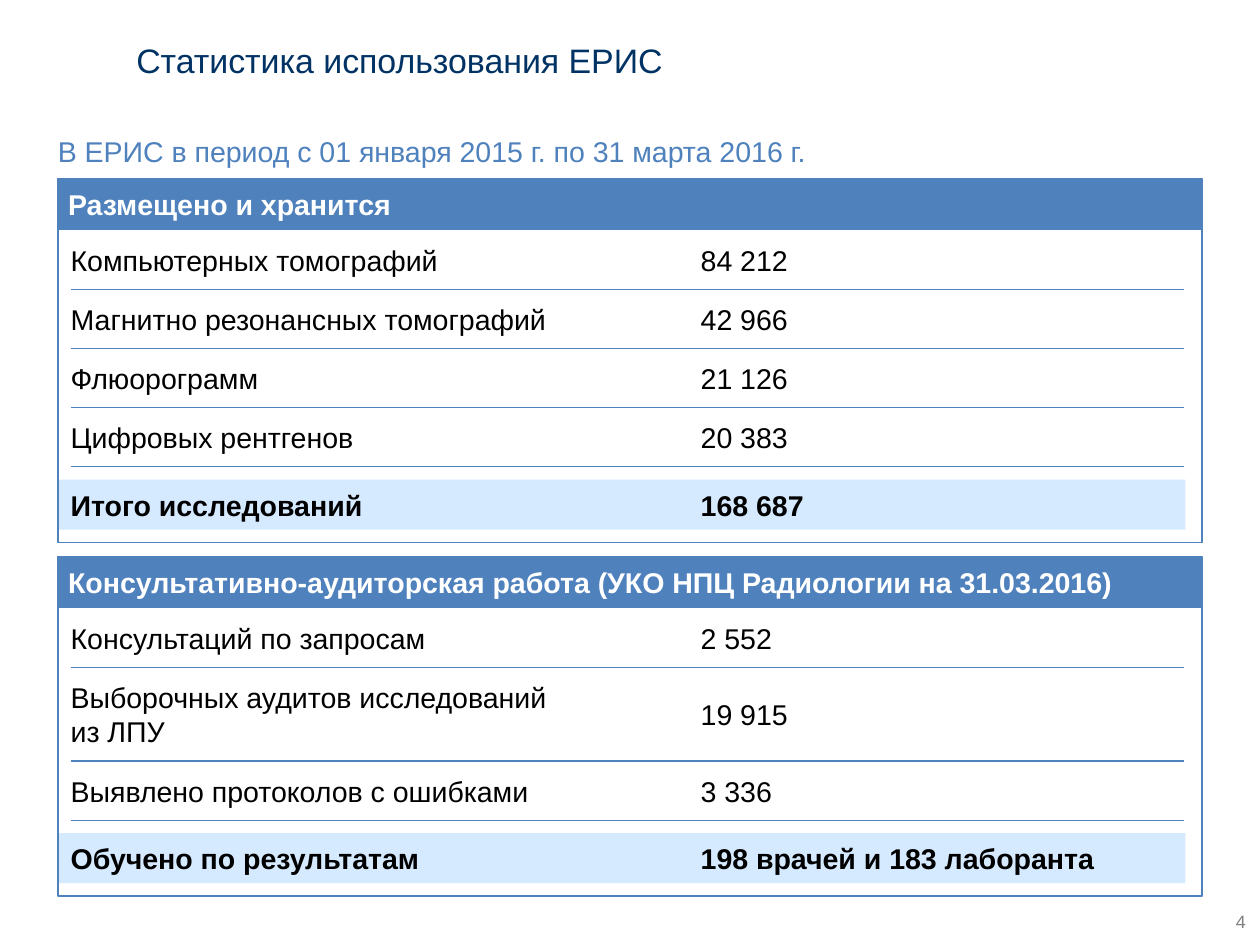
"""Build the ERIS usage statistics slide with two panels of figures."""
import pptx
import pptx.dml.color
import pptx.enum.shapes
import pptx.enum.text
import pptx.util
from lxml import etree

Inches = pptx.util.Inches
ALIGN = pptx.enum.text.PP_ALIGN
BLUE, NAVY, PALE, GREY = "4F81BD", "003264", "D6EAFF", "808080"
BLACK, WHITE = "000000", "FFFFFF"

PANEL_LEFT, PANEL_WIDTH = 0.45, 8.9
LABEL_LEFT, LABEL_WIDTH = 0.55, 3.86
VALUE_LEFT, VALUE_WIDTH = 5.45, 3.76
RULE_RIGHT = VALUE_LEFT + VALUE_WIDTH
HEADER_HEIGHT, BAND_HEIGHT = 0.39, 0.39
ROW_HEIGHT, LINE_HEIGHT, GAP = 0.46, 0.27, 0.1

panels = [
    (1.39, "Размещено и хранится",
     [("Компьютерных томографий", "84 212", 1),
      ("Магнитно резонансных томографий", "42 966", 1),
      ("Флюорограмм", "21 126", 1),
      ("Цифровых рентгенов", "20 383", 1)],
     ("Итого исследований", "168 687")),
    (4.33, "Консультативно-аудиторская работа (УКО НПЦ Радиологии на 31.03.2016)",
     [("Консультаций по запросам", "2 552", 1),
      ("Выборочных аудитов исследований из ЛПУ", "19 915", 2),
      ("Выявлено протоколов с ошибками", "3 336", 1)],
     ("Обучено по результатам", "198 врачей и 183 лаборанта")),
]

presentation = pptx.Presentation()
presentation.slide_width = Inches(9.8)
presentation.slide_height = Inches(7.35)
slide = presentation.slides.add_slide(presentation.slide_layouts[5])
shapes = slide.shapes


def write(shape, text, color, size=16, bold=False, align=ALIGN.LEFT, margin=0):
    frame = shape.text_frame
    frame.word_wrap = True
    frame.auto_size = pptx.enum.text.MSO_AUTO_SIZE.NONE
    frame.vertical_anchor = pptx.enum.text.MSO_ANCHOR.MIDDLE
    frame.margin_left = frame.margin_right = Inches(margin)
    frame.margin_top = frame.margin_bottom = 0
    paragraph = frame.paragraphs[0]
    paragraph.alignment = align
    run = paragraph.add_run()
    run.text = text
    run.font.name = "Arial"
    run.font.size = pptx.util.Pt(size)
    run.font.bold = bold
    run.font.color.rgb = pptx.dml.color.RGBColor.from_string(color)


def add_box(left, top, width, height, fill=None, line=None):
    box = shapes.add_shape(pptx.enum.shapes.MSO_SHAPE.RECTANGLE,
                           Inches(left), Inches(top), Inches(width), Inches(height))
    box.shadow.inherit = False
    for part, color in ((box.fill, fill), (box.line.fill, line)):
        if color:
            part.solid()
            part.fore_color.rgb = pptx.dml.color.RGBColor.from_string(color)
        else:
            part.background()
    if line:
        box.line.width = pptx.util.Pt(1)
    return box


title = shapes.title
title.left, title.top = Inches(1.06), Inches(0.31)
title.width, title.height = Inches(7.92), Inches(0.32)
write(title, "Статистика использования ЕРИС", NAVY, size=19)

period = shapes.add_textbox(Inches(PANEL_LEFT), Inches(1.04), Inches(PANEL_WIDTH), Inches(LINE_HEIGHT))
write(period, "В ЕРИС в период с 01 января 2015 г. по 31 марта 2016 г.", BLUE)

for panel_top, heading, rows, total in panels:
    header = add_box(PANEL_LEFT, panel_top, PANEL_WIDTH, HEADER_HEIGHT, BLUE, BLUE)
    write(header, heading, WHITE, bold=True, margin=0.08)

    cells = []
    top = panel_top + 0.4
    for label, value, lines in rows:
        height = ROW_HEIGHT + (lines - 1) * LINE_HEIGHT
        cells.append((label, value, top, height, False))
        top += height
        rule = shapes.add_connector(pptx.enum.shapes.MSO_CONNECTOR.STRAIGHT,
                                    Inches(LABEL_LEFT), Inches(top), Inches(RULE_RIGHT), Inches(top))
        rule.line.color.rgb = pptx.dml.color.RGBColor.from_string(BLUE)
        rule.line.width = pptx.util.Pt(0.75)
        properties = rule.line._get_or_add_ln().getparent()
        etree.SubElement(properties, pptx.oxml.ns.qn("a:effectLst"))

    top += GAP
    add_box(PANEL_LEFT + 0.01, top, 8.76, BAND_HEIGHT, PALE)
    cells.append((*total, top, BAND_HEIGHT, True))

    for label, value, cell_top, height, bold in cells:
        for left, width, text in ((LABEL_LEFT, LABEL_WIDTH, label), (VALUE_LEFT, VALUE_WIDTH, value)):
            cell = shapes.add_textbox(Inches(left), Inches(cell_top), Inches(width), Inches(height))
            write(cell, text, BLACK, bold=bold)

    add_box(PANEL_LEFT, panel_top, PANEL_WIDTH, top + BAND_HEIGHT + GAP - panel_top, line=BLUE)

number = shapes.add_textbox(Inches(9.52), Inches(7.08), Inches(0.17), Inches(0.17))
write(number, "4", GREY, size=10, align=ALIGN.RIGHT)

presentation.save("out.pptx")
